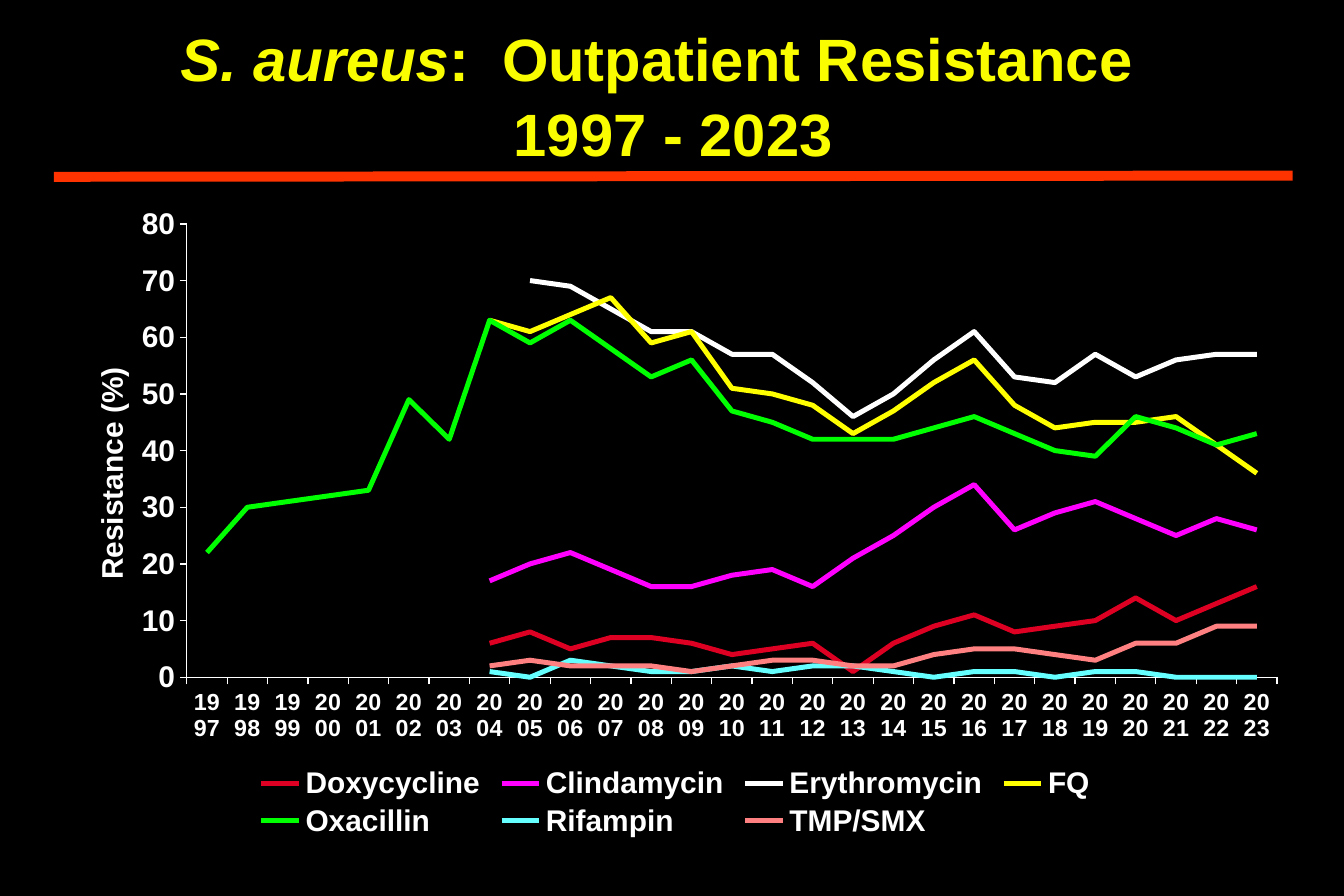
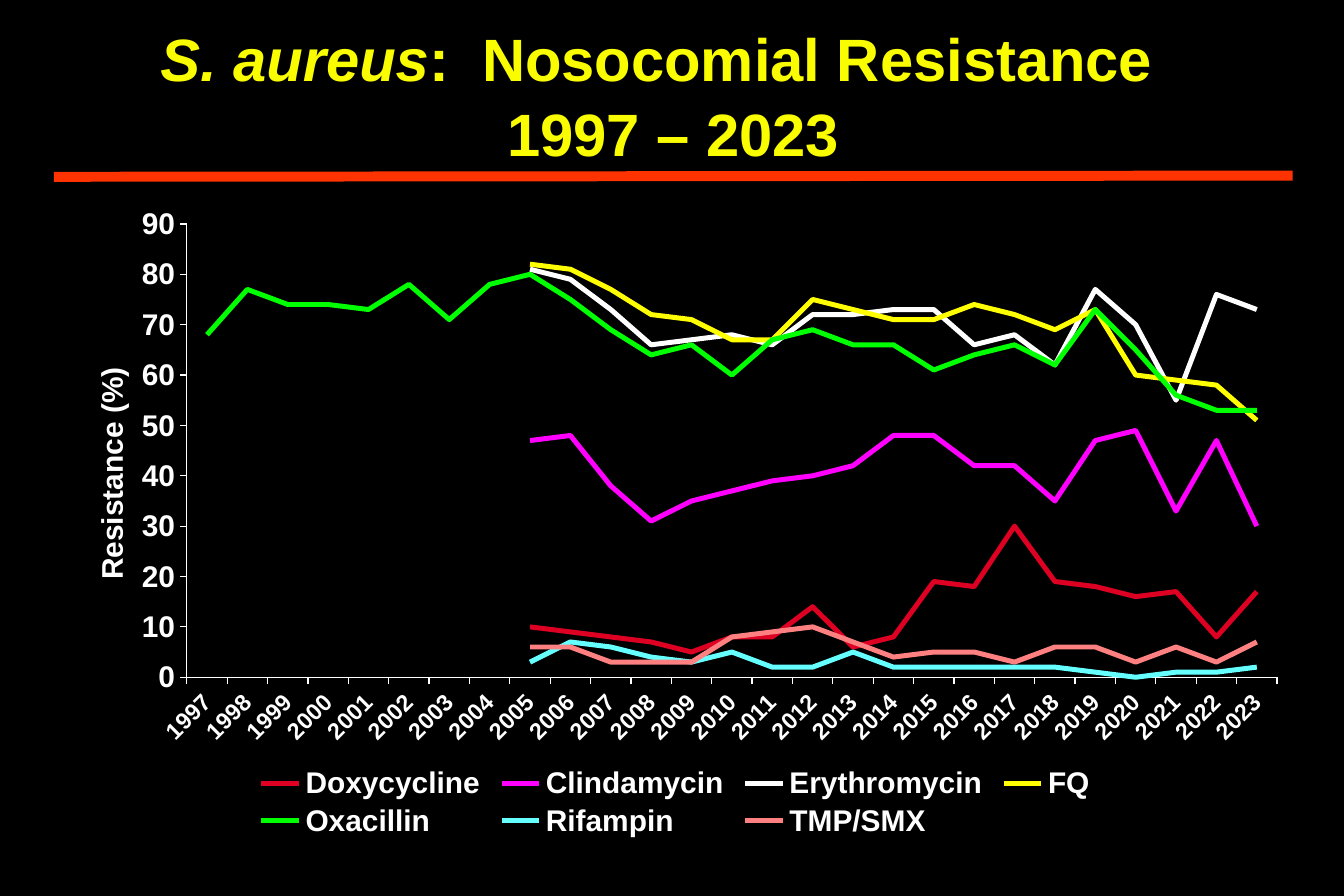
"""Build two slides charting S. aureus resistance by setting, 1997 to 2023."""
from math import floor

from lxml import etree
from pptx import Presentation
from pptx.chart.data import CategoryChartData
from pptx.dml.color import RGBColor
from pptx.enum.chart import XL_CHART_TYPE, XL_LEGEND_POSITION, XL_MARKER_STYLE, XL_TICK_MARK
from pptx.enum.shapes import MSO_CONNECTOR
from pptx.enum.text import MSO_ANCHOR, PP_ALIGN
from pptx.oxml.ns import qn
from pptx.util import Inches, Pt

LINE_CHART = XL_CHART_TYPE.LINE
LEGEND_BOTTOM = XL_LEGEND_POSITION.BOTTOM
NO_MARKER = XL_MARKER_STYLE.NONE
TICK_OUT, TICK_NONE = XL_TICK_MARK.OUTSIDE, XL_TICK_MARK.NONE
STRAIGHT = MSO_CONNECTOR.STRAIGHT
MIDDLE = MSO_ANCHOR.MIDDLE
CENTER = PP_ALIGN.CENTER

FONT = "Arial"
BLACK, WHITE, TITLE_YELLOW, RULE_RED = "000000", "FFFFFF", "FAFD00", "FF3300"
BODY_SIZE = 18
YEARS = [str(year) for year in range(1997, 2024)]
DRUG_COLORS = {
    "Doxycycline": "DD0022",
    "Clindamycin": "FF00FF",
    "Erythromycin": "FFFFFF",
    "FQ": "FFFF00",
    "Oxacillin": "00FF00",
    "Rifampin": "66FFFF",
    "TMP/SMX": "FF8080",
}

mid = None
SETTINGS = [
    {
        "heading": ":  Outpatient Resistance  ",
        "period": "1997 - 2023",
        "axis_max": 80,
        "year_angle": 0,
        "resistance": {
            "Doxycycline": [6, 8, 5, 7, mid, 6, 4, mid, 6, 1, 6, mid, 11, 8, mid, 10, 14, 10,
                            mid, 16],
            "Clindamycin": [17, mid, 22, mid, 16, 16, mid, 19, 16, mid, mid, mid, 34, 26, mid,
                            31, mid, 25, 28, 26],
            "Erythromycin": [70, 69, mid, 61, 61, 57, 57, mid, 46, 50, mid, 61, 53, 52, 57, 53,
                             56, mid, 57],
            "FQ": [63, 61, mid, 67, 59, 61, 51, mid, 48, 43, mid, mid, 56, 48, 44, mid, mid, 46,
                   mid, 36],
            "Oxacillin": [22, 30, mid, mid, 33, 49, 42, 63, 59, 63, mid, 53, 56, 47, mid, 42, mid,
                          42, mid, 46, mid, 40, 39, 46, mid, 41, 43],
            "Rifampin": [1, 0, 3, mid, 1, 1, 2, 1, 2, mid, 1, 0, 1, mid, 0, 1, mid, 0, mid, 0],
            "TMP/SMX": [2, 3, 2, mid, 2, 1, mid, 3, mid, 2, 2, mid, 5, mid, 4, 3, 6, 6, 9, 9],
        },
    },
    {
        "heading": ":  Nosocomial Resistance  ",
        "period": "1997 – 2023",
        "axis_max": 90,
        "year_angle": -45,
        "resistance": {
            "Doxycycline": [10, mid, 8, mid, 5, 8, 8, 14, 6, 8, 19, 18, 30, 19, mid, 16, 17, 8,
                            17],
            "Clindamycin": [47, 48, 38, 31, 35, mid, mid, mid, 42, 48, 48, 42, 42, 35, 47, 49,
                            33, 47, 30],
            "Erythromycin": [81, 79, mid, 66, mid, 68, 66, 72, mid, mid, 73, 66, 68, 62, 77, 70,
                             55, 76, 73],
            "FQ": [82, 81, mid, 72, 71, 67, 67, 75, mid, 71, 71, 74, mid, 69, 73, 60, mid, 58,
                   51],
            "Oxacillin": [68, 77, 74, mid, 73, 78, 71, 78, 80, mid, 69, 64, 66, 60, 67, 69, 66,
                          66, 61, mid, 66, 62, 73, mid, 56, 53, 53],
            "Rifampin": [3, 7, mid, mid, 3, 5, 2, 2, 5, 2, mid, mid, mid, 2, mid, 0, mid, mid, 2],
            "TMP/SMX": [6, 6, 3, mid, 3, 8, mid, 10, mid, 4, 5, 5, 3, 6, 6, 3, 6, 3, 7],
        },
    },
]


def rgb(value):
    """Turn a hex string into a colour."""
    return RGBColor.from_string(value)


def interpolate(values):
    """Fill each mid value from the straight line between its known neighbours."""
    filled = list(values)
    known = [index for index, value in enumerate(values) if value is not mid]
    for start, end in zip(known, known[1:]):
        step = (values[end] - values[start]) / (end - start)
        for index in range(start + 1, end):
            filled[index] = floor(values[start] + step * (index - start) + 0.5)
    return filled


def style_font(font, size=BODY_SIZE, color=WHITE, italic=False):
    """Apply the bold deck font."""
    font.name, font.size, font.bold, font.italic = FONT, Pt(size), True, italic
    font.color.rgb = rgb(color)


def place(element, index, **fractions):
    """Fix a chart part at fractions of the chart area."""
    for automatic in element.findall(qn("c:layout")):
        element.remove(automatic)
    layout = etree.Element(qn("c:layout"))
    manual = etree.SubElement(layout, qn("c:manualLayout"))
    if element.tag == qn("c:plotArea"):
        etree.SubElement(manual, qn("c:layoutTarget")).set("val", "inner")
    for mode in ("xMode", "yMode"):
        etree.SubElement(manual, qn("c:" + mode)).set("val", "edge")
    for side, fraction in fractions.items():
        etree.SubElement(manual, qn("c:" + side)).set("val", str(fraction))
    element.insert(index, layout)


def add_title(slide, heading, period):
    """Add the two-line title and the rule below it."""
    rule = slide.shapes.add_connector(
        STRAIGHT, Inches(0.45), Inches(1.48), Inches(10.82), Inches(1.47))
    rule.line.color.rgb = rgb(RULE_RED)
    rule.line.width = Pt(6)
    etree.SubElement(rule._element.spPr, qn("a:effectLst"))

    title = slide.shapes.add_textbox(Inches(0.41), Inches(0.2), Inches(10.45), Inches(1.16))
    frame = title.text_frame
    frame.word_wrap = True
    frame.vertical_anchor = MIDDLE
    paragraph = frame.paragraphs[0]
    paragraph.alignment = CENTER
    paragraph.line_spacing = 1.05
    for text, italic in (("S. aureus", True), (heading, False), (period, False)):
        if text == period:
            paragraph.add_line_break()
        run = paragraph.add_run()
        run.text = text
        style_font(run.font, 36, TITLE_YELLOW, italic)


def style_axis(axis, label_size=BODY_SIZE):
    """Give an axis white lines, outside ticks and bold labels."""
    axis.has_major_gridlines = False
    axis.major_tick_mark, axis.minor_tick_mark = TICK_OUT, TICK_NONE
    axis.format.line.color.rgb = rgb(WHITE)
    axis.format.line.width = Pt(0.75)
    style_font(axis.tick_labels.font, label_size)


def add_resistance_chart(slide, setting):
    """Add the line chart of resistance by drug and year."""
    data = CategoryChartData(number_format="General")
    data.categories = YEARS
    for drug, values in setting["resistance"].items():
        data.add_series(drug, [None] * (len(YEARS) - len(values)) + interpolate(values))
    chart = slide.shapes.add_chart(
        LINE_CHART, Inches(0.41), Inches(1.6), Inches(10.49), Inches(5.5), data).chart
    chart.has_title = False
    style_font(chart.font)

    for series in chart.plots[0].series:
        series.smooth = False
        series.marker.style = NO_MARKER
        series.format.line.color.rgb = rgb(DRUG_COLORS[series.name])
        series.format.line.width = Pt(3)

    years, percent = chart.category_axis, chart.value_axis
    style_axis(years, 14)
    angle = years._element.find(qn("c:txPr")).find(qn("a:bodyPr"))
    angle.set("rot", str(setting["year_angle"] * 60000))
    angle.set("vert", "horz")
    style_axis(percent)
    percent.minimum_scale, percent.maximum_scale = 0, setting["axis_max"]
    percent.major_unit = 10
    caption = percent.axis_title.text_frame.paragraphs[0].add_run()
    caption.text = "Resistance (%)"
    style_font(caption.font)

    chart.has_legend = True
    legend = chart.legend
    legend.position = LEGEND_BOTTOM
    legend.include_in_layout = False
    style_font(legend.font)

    place(chart._chartSpace.chart.plotArea, 0, x=0.11, y=0.05, w=0.87, h=0.69)
    place(percent.axis_title._element, 1, x=0.03, y=0.26)
    place(legend._element, 1, x=0.16, y=0.87, w=0.68, h=0.12)


def main():
    """Build and save the deck."""
    deck = Presentation()
    deck.slide_width, deck.slide_height = Inches(11.25), Inches(7.5)
    backdrop = deck.slide_master.background.fill
    backdrop.solid()
    backdrop.fore_color.rgb = rgb(BLACK)
    for setting in SETTINGS:
        slide = deck.slides.add_slide(deck.slide_layouts[6])
        add_title(slide, setting["heading"], setting["period"])
        add_resistance_chart(slide, setting)
    deck.save("out.pptx")


if __name__ == "__main__":
    main()
